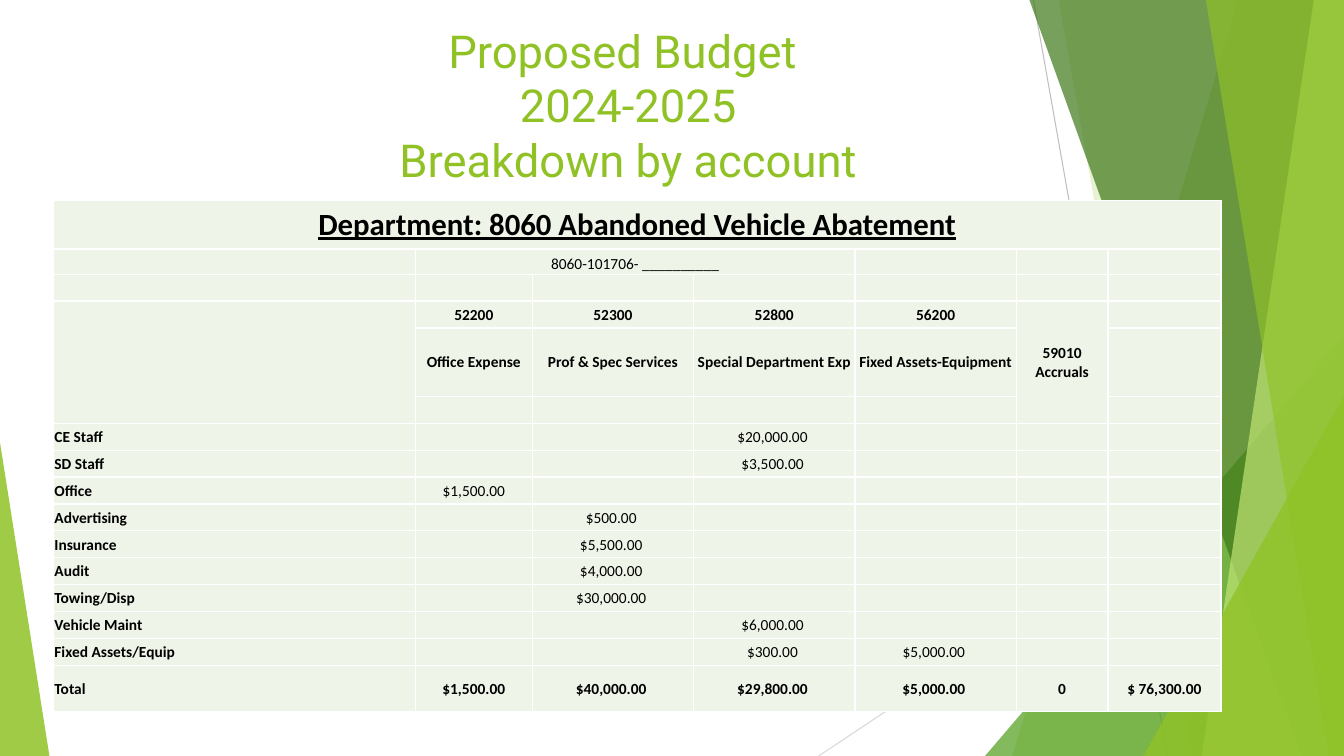
from dataclasses import dataclass
from lxml.etree import SubElement
from pptx import Presentation
from pptx.dml.color import RGBColor as Rgb
from pptx.enum.shapes import MSO_CONNECTOR as Conn, MSO_SHAPE as Shape
from pptx.enum.text import MSO_ANCHOR as Anchor, PP_ALIGN as Align
from pptx.oxml import parse_xml
from pptx.oxml.ns import nsdecls, qn
from pptx.util import Inches, Pt

WIDE, HIGH = 13.33, 7.5


@dataclass(frozen=True)
class Theme:
    green: str = "90C226"
    leaf: str = "54A021"
    deep: str = "3F7819"
    lime: str = "C0E474"
    gray: str = "BFBFBF"
    pale: str = "D9D9D9"
    cell: str = "EEF4E8"
    white: str = "FFFFFF"
    ink: str = "000000"
    title_font: str = "Roboto"
    body_font: str = "Calibri"
    title: float = 32.4
    head: float = 22
    body: float = 11


class Deck:
    def __init__(self, theme):
        self.theme = theme
        self.file = Presentation()
        self.file.slide_width, self.file.slide_height = Inches(WIDE), Inches(HIGH)
        self.slide = self.file.slides.add_slide(self.file.slide_layouts[6])
        self.shapes = self.slide.shapes

    def line(self, start, end, color):
        line = self.shapes.add_connector(Conn.STRAIGHT, *map(Inches, start + end))
        line.line.color.rgb = Rgb.from_string(color)
        line.line.width = Pt(0.75)
        SubElement(line._element.spPr, qn("a:effectLst"))

    def paint(self, shape, color, alpha):
        """Fill with a colour at a given opacity in percent."""
        shape.shadow.inherit = False
        shape.line.fill.background()
        shape.fill.solid()
        shape.fill.fore_color.rgb = Rgb.from_string(color)
        tint = shape._element.spPr.find(qn("a:solidFill"))[0]
        SubElement(tint, qn("a:alpha"), val=str(alpha * 1000))

    def band(self, top, foot, color, alpha):
        """Full-height band from a slanted left edge to the slide's right edge."""
        edge = self.shapes.build_freeform(Inches(top), 0)
        points = [(WIDE, 0), (WIDE, HIGH), (foot, HIGH)]
        edge.add_line_segments([(Inches(x), Inches(y)) for x, y in points])
        self.paint(edge.convert_to_shape(), color, alpha)

    def wedge(self, left, top, width, tip, color, alpha):
        """Triangle standing on the slide's bottom edge; tip is 0 or 1."""
        box = map(Inches, (left, top, width, HIGH - top))
        shape = self.shapes.add_shape(Shape.ISOSCELES_TRIANGLE, *box)
        shape.adjustments[0] = tip
        self.paint(shape, color, alpha)

    def run(self, para, text, font, size, color, bold=False, line=False):
        run = para.add_run()
        run.text = text
        style = run.font
        style.name, style.size, style.bold = font, Pt(size), bold
        style.underline = line
        style.color.rgb = Rgb.from_string(color)

    def title(self, lines, box):
        look = self.theme
        frame = self.shapes.add_textbox(*map(Inches, box)).text_frame
        frame.word_wrap = True
        frame.vertical_anchor = Anchor.TOP
        para = frame.paragraphs[0]
        para.alignment = Align.CENTER
        for i, text in enumerate(lines):
            if i:
                para.add_line_break()
            self.run(para, text, look.title_font, look.title, look.green)

    def frame(self, cell):
        """Fill, margins and white borders of one cell."""
        look = self.theme
        cell.fill.solid()
        cell.fill.fore_color.rgb = Rgb.from_string(look.cell)
        cell.margin_left = cell.margin_right = cell.margin_top = Inches(0.01)
        cell.margin_bottom = 0
        for i, side in enumerate("LRTB"):
            cell._tc.tcPr.insert(i, parse_xml(
                f'<a:ln{side} {nsdecls("a")} w="12700"><a:solidFill>'
                f'<a:srgbClr val="{look.white}"/></a:solidFill></a:ln{side}>'))

    def label(self, cell, text, align, anchor, size, bold, line):
        look = self.theme
        para = cell.text_frame.paragraphs[0]
        cell.vertical_anchor = anchor
        para.alignment = align
        if text:
            self.run(para, text, look.body_font, size, look.ink, bold, line)
        else:
            SubElement(para._p, qn("a:endParaRPr"), sz=str(int(size * 100)))

    def table(self, box, cols, rows, data, spans):
        look = self.theme
        grid = self.shapes.add_table(len(rows), len(cols), *map(Inches, box)).table
        grid.first_row = grid.horz_banding = False
        for col, width in zip(grid.columns, cols):
            col.width = Inches(width)
        for row, height in zip(grid.rows, rows):
            row.height = Inches(height)
        last = len(rows) - 1
        for r in range(len(rows)):
            for c in range(len(cols)):
                cell = grid.cell(r, c)
                self.frame(cell)
                side = c == 0 and r > 0
                self.label(
                    cell, data.get((r, c), ""),
                    Align.LEFT if side else Align.CENTER,
                    Anchor.BOTTOM if r == 1 else Anchor.MIDDLE,
                    look.body if r else look.head,
                    side or r in (0, 3, 4, last), r == 0)
        for r, c, down, over in spans:
            grid.cell(r, c).merge(grid.cell(r + down - 1, c + over - 1))


CODES = ["52200", "52300", "52800", "56200", "59010 Accruals"]
NAMES = ["Office Expense", "Prof & Spec Services",
         "Special Department Exp", "Fixed Assets-Equipment"]
COSTS = [
    ("CE Staff", {3: "$20,000.00 "}),
    ("SD Staff", {3: "$3,500.00 "}),
    ("Office", {1: " $1,500.00 "}),
    ("Advertising", {2: "$500.00 "}),
    ("Insurance", {2: "$5,500.00 "}),
    ("Audit", {2: "$4,000.00 "}),
    ("Towing/Disp", {2: "$30,000.00 "}),
    ("Vehicle Maint", {3: "$6,000.00 "}),
    ("Fixed Assets/Equip", {3: "$300.00 ", 4: "$5,000.00 "}),
    ("Total", {1: " $1,500.00 ", 2: "$40,000.00 ", 3: "$29,800.00 ",
               4: "$5,000.00 ", 5: "0", 6: " $ 76,300.00 "}),
]


def budget():
    """Cell texts keyed by row and column."""
    data = {(0, 0): "Department: 8060 Abandoned Vehicle Abatement",
            (1, 1): "8060-101706- __________"}
    for r, texts in ((3, CODES), (4, NAMES)):
        data.update({(r, c): text for c, text in enumerate(texts, 1)})
    for r, (name, sums) in enumerate(COSTS, 6):
        data[r, 0] = name
        data.update({(r, c): text for c, text in sums.items()})
    return data


def main():
    look = Theme()
    deck = Deck(look)
    deck.line((10.25, 0), (11.58, HIGH), look.gray)
    deck.line((WIDE, 4.03), (8.12, HIGH), look.pale)
    deck.band(12.28, 10.04, look.green, 30)
    deck.band(10.5, 11.83, look.green, 20)
    deck.wedge(9.77, 3.33, 3.56, 1, look.leaf, 72)
    deck.band(10.21, 12.91, look.deep, 70)
    deck.band(13.03, 11.92, look.lime, 70)
    deck.band(11.96, 13.18, look.green, 65)
    deck.wedge(11.34, 3.93, 1.99, 1, look.green, 80)
    deck.wedge(0, 4.39, 0.49, 0, look.green, 85)
    deck.title(["Proposed Budget ", "2024-2025", "Breakdown by account"],
               (1.53, 0.18, 9.4, 1.44))

    tall = 5.07
    top, code, names, total = 0.48, 0.25, 0.68, 0.46
    step = (tall - top - code - names - total) / 12
    rows = [top, code, step, step, names] + [step] * 10 + [total]
    cols = [3.59, 1.16, 1.6, 1.6, 1.6, 0.91, 1.12]
    spans = [(0, 0, 1, 7), (1, 1, 1, 3), (3, 0, 3, 1), (3, 5, 3, 1)]
    deck.table((0.53, 1.99, sum(cols), tall), cols, rows, budget(), spans)
    deck.file.save("out.pptx")


if __name__ == "__main__":
    main()
